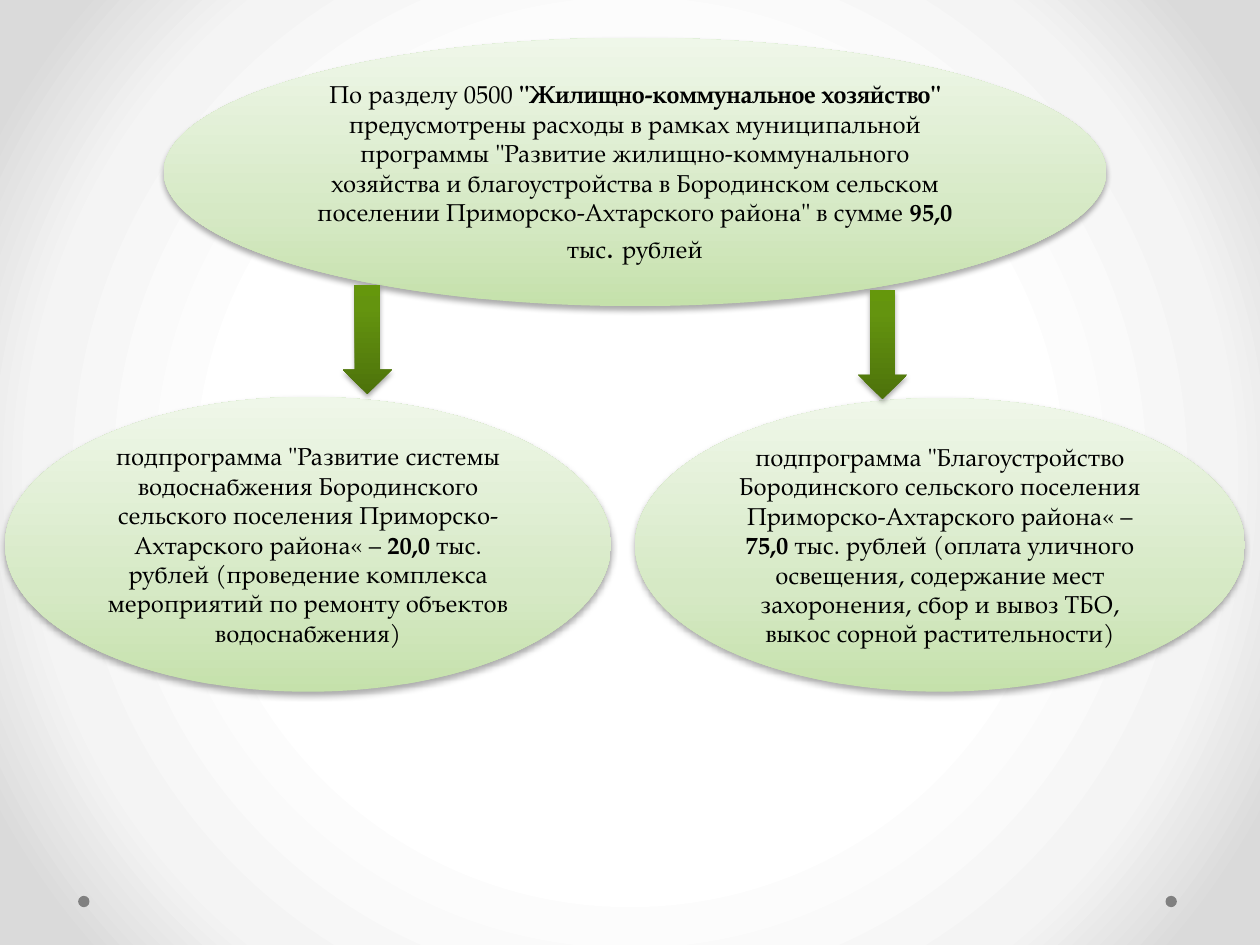
import pptx
import pptx.util
import pptx.dml.color
import pptx.enum.shapes
import pptx.enum.text
import pptx.oxml
import pptx.oxml.ns

Inches, Pt = pptx.util.Inches, pptx.util.Pt
RGB = pptx.dml.color.RGBColor.from_string
KIND = pptx.enum.shapes.MSO_SHAPE
qn = pptx.oxml.ns.qn

FONT = "TeX Gyre Pagella"
COLORS = {"text": "000000", "dot": "808080", "shadow": "000000"}
GRADS = {
    "back": [(50, "FFFFFF"), (76, "F4F4F4"), (92, "DADADA")],
    "oval": [(0, "C5E1AB"), (35, "D6E9C5"), (100, "EFF7E9")],
    "arrow": [(0, "4D720B"), (80, "64940F"), (100, "65970C")],
}
LINEAR = '<a:lin ang="16200000" scaled="0"/>'
RADIAL = ('<a:path path="circle"><a:fillToRect l="50000" t="50000" '
          'r="50000" b="50000"/></a:path>')
# opacity in percent, blur and distance in points
SHADOWS = {"oval": (32, 3.5, 2.2), "arrow": (35, 3.1, 1.8)}

# box, then runs of (text, bold, size)
OVALS = [
    ((1.3, 0.3, 7.48, 2.13), [
        ("По разделу 0500 ", False, 14),
        ('"Жилищно-коммунальное хозяйство" ', True, 14),
        ("предусмотрены расходы в рамках муниципальной программы "
         '"Развитие жилищно-коммунального хозяйства и благоустройства в '
         'Бородинском сельском поселении Приморско-Ахтарского района" '
         "в сумме ", False, 14),
        ("95,0", True, 14),
        (" тыс", False, 14),
        (". ", False, 18),
        ("рублей", False, 14),
    ]),
    ((0.04, 3.15, 4.81, 2.34), [
        ('подпрограмма "Развитие системы водоснабжения Бородинского '
         "сельского поселения Приморско-Ахтарского района« – ", False, 14),
        ("20,0 ", True, 14),
        ("тыс. рублей (проведение комплекса мероприятий по ремонту "
         "объектов водоснабжения)", False, 14),
    ]),
    ((5.04, 3.16, 4.84, 2.33), [
        ('подпрограмма "Благоустройство Бородинского сельского '
         "поселения Приморско-Ахтарского района« – ", False, 14),
        ("75,0 ", True, 14),
        ("тыс. рублей (оплата уличного освещения, содержание мест "
         "захоронения, сбор и вывоз ТБО, выкос сорной растительности)",
         False, 14),
    ]),
]
ARROWS = [(2.72, 2.26), (6.81, 2.3)]
ARROW_SIZE = (0.39, 0.87)
DOTS = [(9.25, 7.11), (0.62, 7.11)]
DOT_SIZE = (0.09, 0.09)


def make(xml):
    head, tail = xml.split(">", 1)
    return pptx.oxml.parse_xml(f"{head} {pptx.oxml.ns.nsdecls('a')}>{tail}")


def blend(fill, parent, stops, course):
    """Give the fill these gradient stops along the given course."""
    fill.gradient()
    marks = "".join(
        f'<a:gs pos="{pos * 1000}"><a:srgbClr val="{color}"/></a:gs>'
        for pos, color in stops)
    new = make(f'<a:gradFill rotWithShape="1"><a:gsLst>{marks}</a:gsLst>'
               f"{course}</a:gradFill>")
    parent.replace(parent.find(qn("a:gradFill")), new)


def add(slide, kind, box):
    shape = slide.shapes.add_shape(kind, *map(Inches, box))
    shape.line.fill.background()
    shape.shadow.inherit = False
    return shape


def style(shape, name):
    """Apply the named gradient and shadow."""
    props = shape._element.spPr
    blend(shape.fill, props, GRADS[name], LINEAR)
    alpha, blur, dist = SHADOWS[name]
    props.find(qn("a:effectLst")).append(make(
        f'<a:outerShdw blurRad="{Pt(blur)}" dist="{Pt(dist)}" dir="5400000" '
        f'rotWithShape="0"><a:srgbClr val="{COLORS["shadow"]}">'
        f'<a:alpha val="{alpha * 1000}"/></a:srgbClr></a:outerShdw>'))


def write(shape, runs):
    frame = shape.text_frame
    frame.word_wrap = True
    frame.vertical_anchor = pptx.enum.text.MSO_ANCHOR.MIDDLE
    para = frame.paragraphs[0]
    para.alignment = pptx.enum.text.PP_ALIGN.CENTER
    for text, bold, size in runs:
        run = para.add_run()
        run.text = text
        run.font.name = FONT
        run.font.size = Pt(size)
        run.font.bold = bold
        run.font.color.rgb = RGB(COLORS["text"])


def main():
    deck = pptx.Presentation()
    deck.slide_width, deck.slide_height = Inches(10), Inches(7.5)
    slide = deck.slides.add_slide(deck.slide_layouts[6])
    fill = slide.background.fill
    blend(fill, slide._element.find(".//" + qn("p:bgPr")),
          GRADS["back"], RADIAL)

    for spot in DOTS:
        dot = add(slide, KIND.OVAL, spot + DOT_SIZE)
        dot.fill.solid()
        dot.fill.fore_color.rgb = RGB(COLORS["dot"])
    for box, runs in OVALS:
        oval = add(slide, KIND.OVAL, box)
        style(oval, "oval")
        write(oval, runs)
    for spot in ARROWS:
        style(add(slide, KIND.DOWN_ARROW, spot + ARROW_SIZE), "arrow")

    deck.save("out.pptx")


if __name__ == "__main__":
    main()
